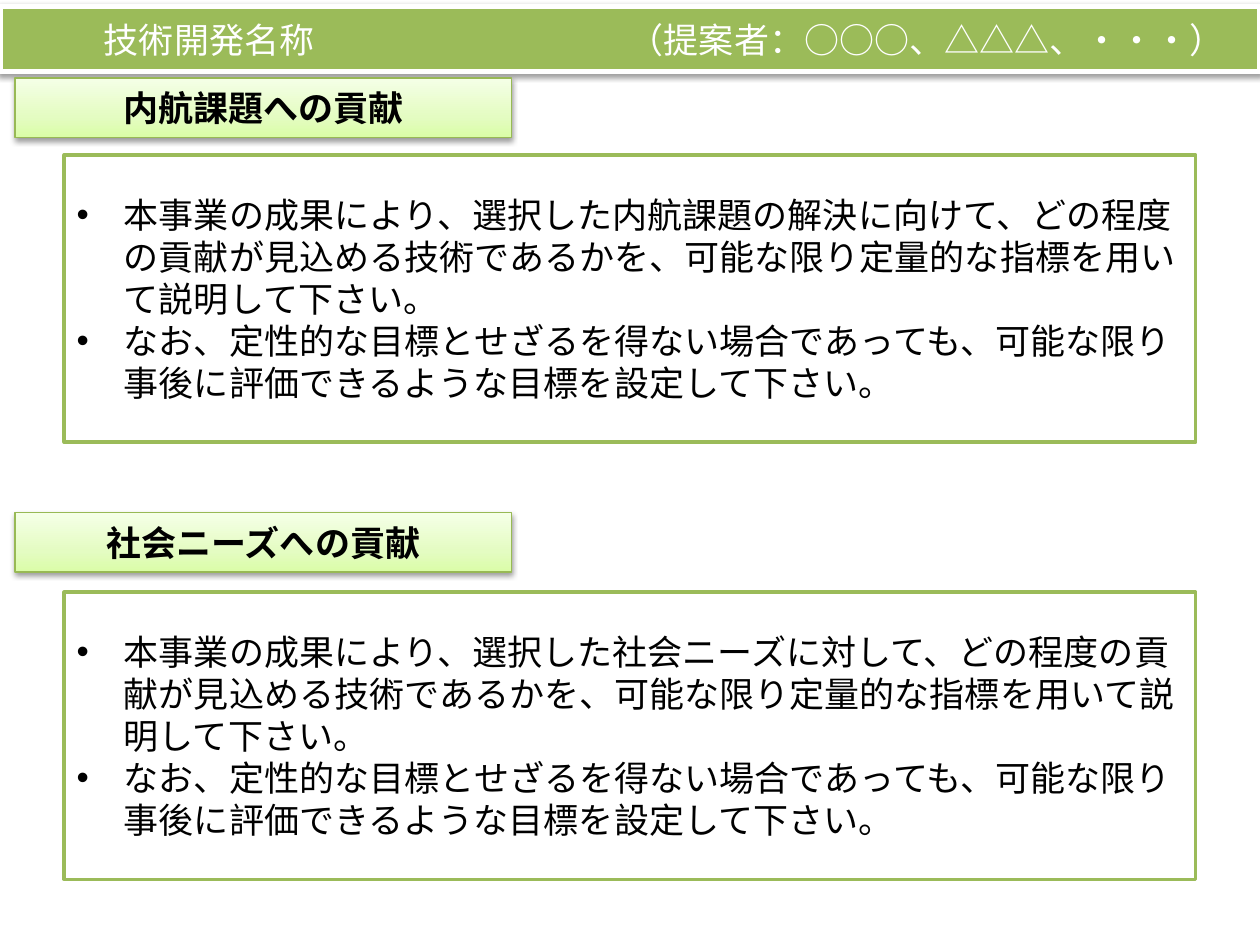
from dataclasses import dataclass

from lxml import etree
from pptx import Presentation
from pptx.dml.color import RGBColor
from pptx.enum.shapes import MSO_SHAPE
from pptx.enum.text import MSO_ANCHOR, PP_ALIGN
from pptx.oxml.ns import qn
from pptx.util import Pt

RECTANGLE = MSO_SHAPE.RECTANGLE
MIDDLE = MSO_ANCHOR.MIDDLE
LEFT, CENTER = PP_ALIGN.LEFT, PP_ALIGN.CENTER

COLOURS = {
    "white": "FFFFFF",
    "black": "000000",
    "green": "9BBB59",
    "label_line": "98B955",
}
LABEL_STOPS = ((0, "DAFDA7"), (35, "E4FCC2"), (100, "F5FFE7"))
FONT = "Calibri"
TEXT_SIZE = 20
BULLET_INDENT = 27


@dataclass
class Section:
    title: str
    bullets: tuple[str, ...]
    label_top: float
    box_top: float


FOLLOW_UP = (
    "なお、定性的な目標とせざるを得ない場合であっても、"
    "可能な限り事後に評価できるような目標を設定して下さい。"
)


def contribution(target: str) -> str:
    return (
        f"本事業の成果により、選択した{target}、どの程度の貢献が見込める技術であるかを、"
        "可能な限り定量的な指標を用いて説明して下さい。"
    )


SECTIONS = (
    Section("内航課題への貢献",
            (contribution("内航課題の解決に向けて"), FOLLOW_UP), 44.64, 88.56),
    Section("社会ニーズへの貢献",
            (contribution("社会ニーズに対して"), FOLLOW_UP), 293.04, 338.4),
)


def add_box(page, left: float, top: float, width: float, height: float,
            fill: str, line: str, line_width: float):
    box = page.shapes.add_shape(RECTANGLE, Pt(left), Pt(top), Pt(width), Pt(height))
    box.shadow.inherit = False
    box.fill.solid()
    box.fill.fore_color.rgb = RGBColor.from_string(COLOURS[fill])
    box.line.color.rgb = RGBColor.from_string(COLOURS[line])
    box.line.width = Pt(line_width)
    box.text_frame.word_wrap = True
    box.text_frame.vertical_anchor = MIDDLE
    return box


def write(para, text: str, *, colour: str = "black", bold: bool = False,
          align=LEFT, bullet: bool = False, tab: float | None = None) -> None:
    para.alignment = align
    span = para.add_run()
    span.text = text
    span.font.name = FONT
    span.font.size = Pt(TEXT_SIZE)
    span.font.bold = bold
    span.font.color.rgb = RGBColor.from_string(COLOURS[colour])
    properties = para._p.get_or_add_pPr()
    if bullet:
        properties.set("marL", str(Pt(BULLET_INDENT)))
        properties.set("indent", str(-Pt(BULLET_INDENT)))
        etree.SubElement(properties, qn("a:buFont"), typeface="Arial")
        etree.SubElement(properties, qn("a:buChar"), char="•")
    if tab is not None:
        tabs = etree.SubElement(properties, qn("a:tabLst"))
        etree.SubElement(tabs, qn("a:tab"), pos=str(Pt(tab)), algn="l")


def add_shadow(box) -> None:
    effects = box._element.spPr.find(qn("a:effectLst"))
    shadow = etree.SubElement(effects, qn("a:outerShdw"), blurRad=str(Pt(3.1)),
                              dist=str(Pt(1.6)), dir="5400000", rotWithShape="0")
    colour = etree.SubElement(shadow, qn("a:srgbClr"), val=COLOURS["black"])
    etree.SubElement(colour, qn("a:alpha"), val="38000")


def add_gradient(box) -> None:
    box.fill.gradient()
    box.fill.gradient_angle = 90
    stops = box._element.spPr.find(qn("a:gradFill")).find(qn("a:gsLst"))
    for stop in list(stops):
        stops.remove(stop)
    for percent, colour in LABEL_STOPS:
        stop = etree.SubElement(stops, qn("a:gs"), pos=str(percent * 1000))
        etree.SubElement(stop, qn("a:srgbClr"), val=colour)


def add_header(page) -> None:
    box = add_box(page, 0, 3.6, 720, 37.44, "green", "white", 3)
    add_shadow(box)
    box.text_frame.margin_left = Pt(59.4)
    write(box.text_frame.paragraphs[0], "技術開発名称\t（提案者：○○○、△△△、・・・）",
          colour="white", tab=300)


def add_section(page, section: Section) -> None:
    # Gradient label
    label = add_box(page, 8.64, section.label_top, 283.68, 33.84,
                    "white", "label_line", 0.75)
    add_gradient(label)
    add_shadow(label)
    write(label.text_frame.paragraphs[0], section.title, bold=True, align=CENTER)

    # Outlined box with bullets
    box = add_box(page, 36.72, section.box_top, 646.56, 164.16, "white", "green", 2)
    frame = box.text_frame
    for index, text in enumerate(section.bullets):
        para = frame.add_paragraph() if index else frame.paragraphs[0]
        write(para, text, bullet=True)


def main() -> None:
    deck = Presentation()
    deck.slide_width, deck.slide_height = Pt(720), Pt(540)
    page = deck.slides.add_slide(deck.slide_layouts[6])
    add_header(page)
    for section in SECTIONS:
        add_section(page, section)
    deck.save("out.pptx")


if __name__ == "__main__":
    main()
